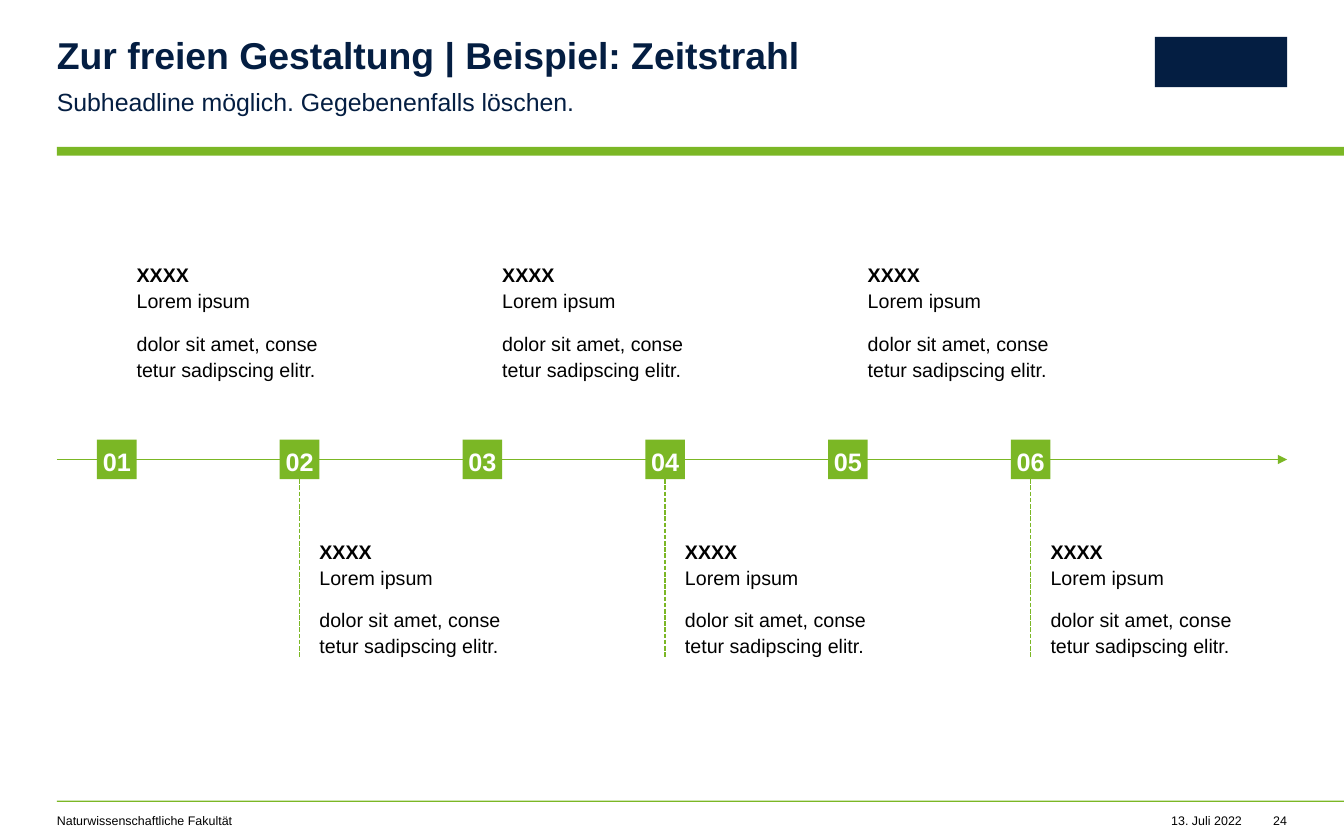
from dataclasses import dataclass

from lxml import etree
from pptx import Presentation
from pptx.dml.color import RGBColor
from pptx.enum import dml, shapes, text
from pptx.oxml.ns import qn
from pptx.util import Cm, Pt

GREEN = RGBColor(0x7B, 0xB7, 0x25)
NAVY = RGBColor(0x04, 0x1E, 0x42)
BLACK = RGBColor(0, 0, 0)
WHITE = RGBColor(255, 255, 255)

LEFT, RIGHT, WIDTH = 1.29, 29.19, 30.48
AXIS = 10.42
SIDE = 0.9
FIRST, STEP = 2.2, 4.145
NOTE_W, NOTE_H = 4.47, 2.72
HIGH, LOW = 5.92, 12.19

HEAD = dict(size=Pt(24), color=NAVY, bold=True)
SUB = dict(size=Pt(16), color=NAVY)
SMALL = dict(size=Pt(8), color=BLACK)
MARK = dict(size=Pt(16.2), color=WHITE, bold=True)
BODY = dict(size=Pt(12.6), color=BLACK, bold=False)
STRONG = BODY | dict(bold=True)
LOOSE = dict(line_spacing=1.1, space_after=Pt(10.8))
ALIGN = text.PP_ALIGN


@dataclass
class Box:
    x: float
    y: float
    w: float
    h: float

    def lengths(self) -> list:
        return [Cm(v) for v in (self.x, self.y, self.w, self.h)]


@dataclass
class Stop:
    label: str
    x: float
    low: bool


def set_all(item, values: dict) -> None:
    for name, value in values.items():
        setattr(item, name, value)


def set_frame(frame, anchor=text.MSO_ANCHOR.TOP, wrap: bool = True) -> None:
    set_all(frame, dict(margin_left=0, margin_right=0, margin_top=0,
                        margin_bottom=0, word_wrap=wrap, vertical_anchor=anchor,
                        auto_size=text.MSO_AUTO_SIZE.NONE))


def write(para, words: str, font: dict, **form) -> None:
    run = para.add_run()
    run.text = words
    run.font.name = "Arial"
    values = dict(font)
    run.font.color.rgb = values.pop("color")
    set_all(run.font, values)
    set_all(para, form)


def add_text(slide, box: Box, words: str, font: dict, wrap: bool = True, **form) -> None:
    frame = slide.shapes.add_textbox(*box.lengths()).text_frame
    set_frame(frame, wrap=wrap)
    write(frame.paragraphs[0], words, font, **form)


def add_rect(slide, box: Box, color: RGBColor):
    rect = slide.shapes.add_shape(shapes.MSO_SHAPE.RECTANGLE, *box.lengths())
    rect.shadow.inherit = False
    rect.fill.solid()
    rect.fill.fore_color.rgb = color
    rect.line.fill.background()
    return rect


def add_line(slide, x1: float, y1: float, x2: float, y2: float):
    line = slide.shapes.add_connector(
        shapes.MSO_CONNECTOR.STRAIGHT, Cm(x1), Cm(y1), Cm(x2), Cm(y2))
    line.line.color.rgb = GREEN
    line.line.width = Pt(1)
    etree.SubElement(line._element.spPr, qn("a:effectLst"))
    return line


def add_note(slide, x: float, y: float) -> None:
    frame = slide.shapes.add_textbox(*Box(x, y, NOTE_W, NOTE_H).lengths()).text_frame
    set_frame(frame)
    top, rest = frame.paragraphs[0], frame.add_paragraph()
    for para, lines in (
        (top, (("XXXX", STRONG), ("Lorem ipsum", BODY))),
        (rest, (("dolor sit amet, conse", BODY), ("tetur sadipscing elitr.", BODY))),
    ):
        (one, font), (two, other) = lines
        write(para, one, font)
        para.add_line_break()
        write(para, two, other, **LOOSE)


def add_stop(slide, stop: Stop) -> None:
    mark = add_rect(slide, Box(stop.x, AXIS - SIDE / 2, SIDE, SIDE), GREEN)
    set_frame(mark.text_frame, text.MSO_ANCHOR.MIDDLE)
    write(mark.text_frame.paragraphs[0], stop.label, MARK,
          alignment=ALIGN.CENTER, **LOOSE)
    add_note(slide, stop.x + SIDE, LOW if stop.low else HIGH)
    if stop.low:
        mid = stop.x + SIDE / 2
        stem = add_line(slide, mid, AXIS + SIDE / 2, mid, LOW + NOTE_H)
        stem.line.dash_style = dml.MSO_LINE.SQUARE_DOT
        stem.begin_connect(mark, 2)


def add_head(slide) -> None:
    title = slide.shapes.title
    box = Box(LEFT, 0.84, 17.5, 0.91)
    set_all(title, dict(zip(("left", "top", "width", "height"), box.lengths())))
    set_frame(title.text_frame)
    write(title.text_frame.paragraphs[0], "Zur freien Gestaltung | Beispiel: Zeitstrahl",
          HEAD, alignment=ALIGN.LEFT, line_spacing=0.9)
    add_text(slide, Box(LEFT, 1.9, 17.12, 0.69),
             "Subheadline möglich. Gegebenenfalls löschen.", SUB,
             line_spacing=1.1, space_after=Pt(12))


def add_foot(slide) -> None:
    y, h = 18.44, 0.33
    add_text(slide, Box(LEFT, y, 13.67, h), "Naturwissenschaftliche Fakultät", SMALL)
    for x, w, words in ((26.52, 1.65, "13. Juli 2022"), (28.87, 0.32, "24")):
        add_text(slide, Box(x, y, w, h), words, SMALL, wrap=False,
                 alignment=ALIGN.RIGHT)


def main() -> None:
    deck = Presentation()
    deck.slide_width, deck.slide_height = Cm(WIDTH), Cm(19.05)
    slide = deck.slides.add_slide(deck.slide_layouts[5])

    for y, h in ((3.33, 0.2), (18.16, 0.03)):
        add_rect(slide, Box(LEFT, y, WIDTH - LEFT, h), GREEN)
    add_rect(slide, Box(26.19, 0.84, 3, 1.14), NAVY)
    add_head(slide)
    add_foot(slide)

    axis = add_line(slide, LEFT, AXIS, RIGHT, AXIS)
    etree.SubElement(axis.line._get_or_add_ln(), qn("a:tailEnd"), type="triangle")
    for i in range(6):
        add_stop(slide, Stop(f"{i + 1:02}", FIRST + i * STEP, i % 2 == 1))

    deck.save("out.pptx")


if __name__ == "__main__":
    main()
